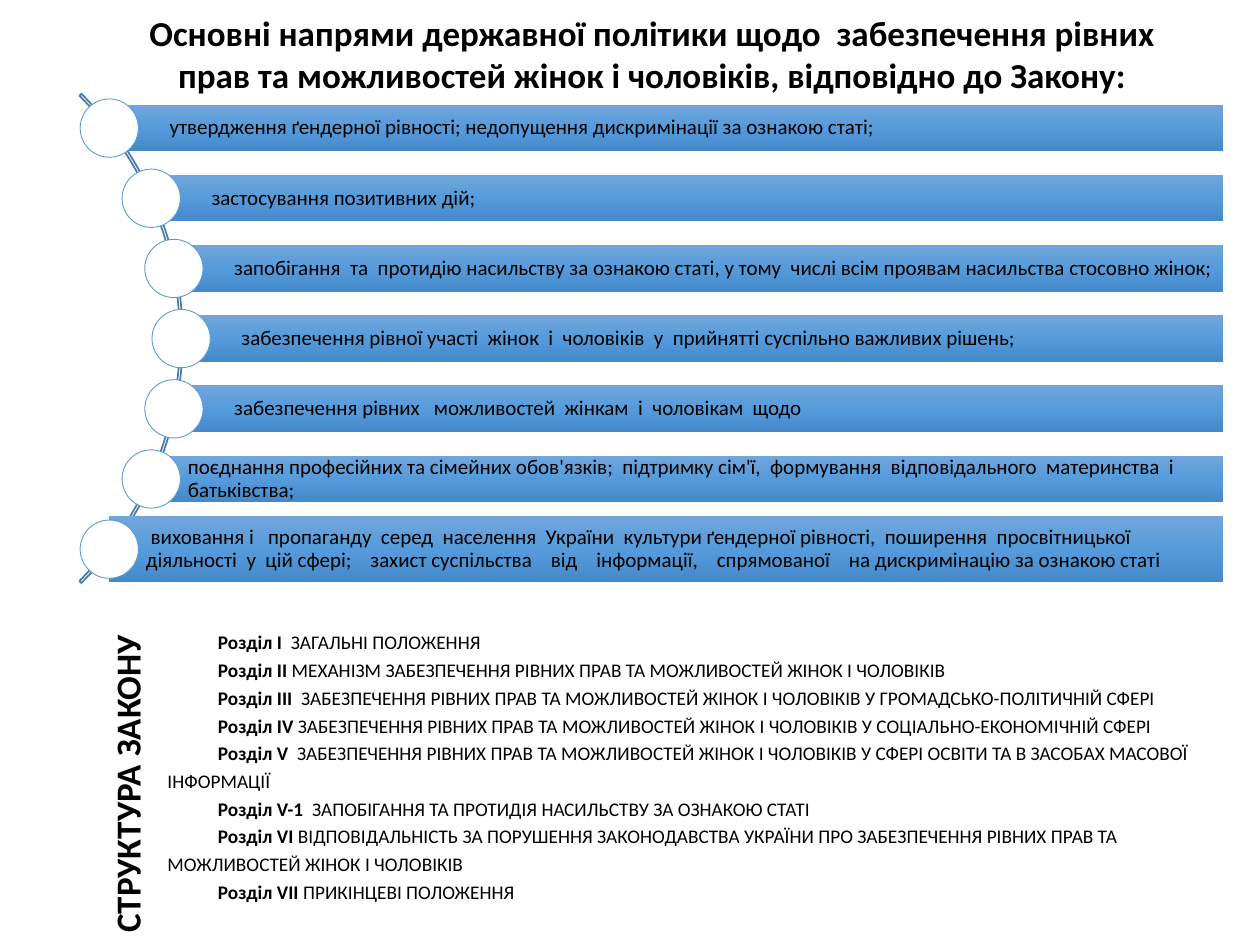
from copy import deepcopy
from math import sqrt

from pptx import Presentation
from pptx.dml.color import RGBColor
from pptx.enum.shapes import MSO_SHAPE
from pptx.enum.text import MSO_ANCHOR, PP_ALIGN
from pptx.oxml.ns import qn
from pptx.util import Pt

ARC, BAR, DOT = MSO_SHAPE.BLOCK_ARC, MSO_SHAPE.RECTANGLE, MSO_SHAPE.OVAL
TOP, MID = MSO_ANCHOR.TOP, MSO_ANCHOR.MIDDLE
LEFT, CENTER = PP_ALIGN.LEFT, PP_ALIGN.CENTER

FONT = "Calibri"
COLORS = {"text": "000000", "dot": "FFFFFF", "ring": "5B9BD5", "arc": "497CAB"}
SHADES = [(0, "71A6DB"), (0.5, "559BDB"), (1, "448ACA")]

# Circle that the dots sit on, and the grid of the bars
MID_X, MID_Y, RADIUS = -93.2, 193.5, 196.7
STEP, RIGHT, SIZE = 40.1, 699, 33.3

TITLE = ("Основні напрями державної політики щодо  забезпечення рівних "
         "прав та можливостей жінок і чоловіків, відповідно до Закону:")

# Text, bar height, left inset, first-line indent
AIMS = [
    ("утвердження ґендерної рівності; недопущення дискримінації за ознакою статі;",
     26.6, 34.5, 0),
    ("застосування позитивних дій;", 26.6, 34.5, 0),
    ("запобігання  та  протидію насильству за ознакою статі, у тому  числі "
     "всім проявам насильства стосовно жінок;", 26.6, 34.5, 0),
    ("забезпечення рівної участі  жінок  і  чоловіків  у  прийнятті суспільно "
     "важливих рішень;", 26.6, 34.5, 0),
    ("забезпечення рівних   можливостей  жінкам  і  чоловікам  щодо",
     26.6, 34.5, 0),
    ("поєднання професійних та сімейних обов'язків;  підтримку сім'ї,  "
     "формування  відповідального  материнства  і  батьківства;", 26.6, 21, 0),
    ("виховання і   пропаганду  серед  населення  України  культури ґендерної "
     "рівності,  поширення  просвітницької  діяльності  у  цій сфері;    захист "
     "суспільства    від    інформації,    спрямованої    на дискримінацію за "
     "ознакою статі", 38.2, 21, 2.7),
]

RIGHTS = "ЗАБЕЗПЕЧЕННЯ РІВНИХ ПРАВ ТА МОЖЛИВОСТЕЙ ЖІНОК І ЧОЛОВІКІВ"
PARTS = [
    ("Розділ I  ", "ЗАГАЛЬНІ ПОЛОЖЕННЯ"),
    ("Розділ II ", "МЕХАНІЗМ " + RIGHTS),
    ("Розділ III  ", RIGHTS + " У ГРОМАДСЬКО-ПОЛІТИЧНІЙ СФЕРІ"),
    ("Розділ IV ", RIGHTS + " У СОЦІАЛЬНО-ЕКОНОМІЧНІЙ СФЕРІ"),
    ("Розділ V  ", RIGHTS + " У СФЕРІ ОСВІТИ ТА В ЗАСОБАХ МАСОВОЇ ІНФОРМАЦІЇ"),
    ("Розділ V-1  ", "ЗАПОБІГАННЯ ТА ПРОТИДІЯ НАСИЛЬСТВУ ЗА ОЗНАКОЮ СТАТІ"),
    ("Розділ VI ", "ВІДПОВІДАЛЬНІСТЬ ЗА ПОРУШЕННЯ ЗАКОНОДАВСТВА УКРАЇНИ ПРО " + RIGHTS),
    ("Розділ VII ", "ПРИКІНЦЕВІ ПОЛОЖЕННЯ"),
]


def color(name):
    return RGBColor.from_string(COLORS[name])


def style(para, size, bold=None, align=LEFT):
    para.alignment = align
    para.font.name, para.font.size = FONT, Pt(size)
    para.font.color.rgb = color("text")
    para.font.bold = bold


def indent(para, first):
    props = para._p.get_or_add_pPr()
    props.set("marL", "0")
    props.set("indent", str(Pt(first)))


def add_shape(slide, kind, x, y, w, h):
    shape = slide.shapes.add_shape(kind, Pt(x), Pt(y), Pt(w), Pt(h))
    shape.shadow.inherit = False
    return shape


def shade(shape):
    shape.fill.gradient()
    stops = shape._element.spPr.find(qn("a:gradFill")).find(qn("a:gsLst"))
    stops.append(deepcopy(stops[-1]))
    for stop, (place, tone) in zip(shape.fill.gradient_stops, SHADES):
        stop.position = place
        stop.color.rgb = RGBColor.from_string(tone)
    shape.fill.gradient_angle = 270


def add_title(slide):
    title = slide.shapes.title
    title.left, title.top, title.width, title.height = Pt(72.7), Pt(2.9), Pt(600), Pt(55.4)
    frame = title.text_frame
    frame.text, frame.word_wrap, frame.vertical_anchor = TITLE, True, TOP
    style(frame.paragraphs[0], 20, True, CENTER)


def add_arc(slide):
    arc = add_shape(slide, ARC, -290.9, -4.3, 395.3, 395.3)
    for i, value in enumerate((189, 27, 0.004)):
        arc.adjustments[i] = value
    arc.fill.background()
    arc.line.color.rgb, arc.line.width = color("arc"), Pt(1)


def add_aim(slide, row, text, height, inset, first):
    y = MID_Y + (row - len(AIMS) // 2) * STEP
    x = MID_X + sqrt(RADIUS ** 2 - (y - MID_Y) ** 2)
    # Bar with its text
    bar = add_shape(slide, BAR, x, y - height / 2, RIGHT - x, height)
    shade(bar)
    bar.line.fill.background()
    frame = bar.text_frame
    frame.word_wrap, frame.vertical_anchor = True, MID
    frame.margin_left = Pt(inset)
    frame.margin_right = frame.margin_top = frame.margin_bottom = Pt(2.4)
    frame.text = text
    para = frame.paragraphs[0]
    para.line_spacing = 0.9
    indent(para, first)
    style(para, 12)
    # Dot on the arc
    dot = add_shape(slide, DOT, x - SIZE / 2, y - SIZE / 2, SIZE, SIZE)
    dot.fill.solid()
    dot.fill.fore_color.rgb = color("dot")
    dot.line.color.rgb, dot.line.width = color("ring"), Pt(0.5)


def add_parts(slide):
    box = slide.shapes.add_textbox(Pt(88.6), Pt(354.2), Pt(610.6), Pt(148.3))
    frame = box.text_frame
    frame.word_wrap = True
    for i, (head, body) in enumerate(PARTS):
        para = frame.paragraphs[0] if i == 0 else frame.add_paragraph()
        para.line_spacing = 1.2
        indent(para, 28.8)
        style(para, 11)
        for text, bold in ((head, True), (body, False)):
            run = para.add_run()
            run.text, run.font.bold = text, bold


def add_label(slide):
    box = slide.shapes.add_textbox(Pt(-20.2), Pt(431.3), Pt(185.8), Pt(31.7))
    box.rotation = 270
    frame = box.text_frame
    frame.word_wrap = False
    frame.text = "СТРУКТУРА ЗАКОНУ"
    style(frame.paragraphs[0], 20, True)


def main():
    deck = Presentation()
    deck.slide_width, deck.slide_height = Pt(720), Pt(540)
    slide = deck.slides.add_slide(deck.slide_layouts[5])
    add_title(slide)
    add_arc(slide)
    for row, aim in enumerate(AIMS):
        add_aim(slide, row, *aim)
    add_parts(slide)
    add_label(slide)
    deck.save("out.pptx")


if __name__ == "__main__":
    main()
